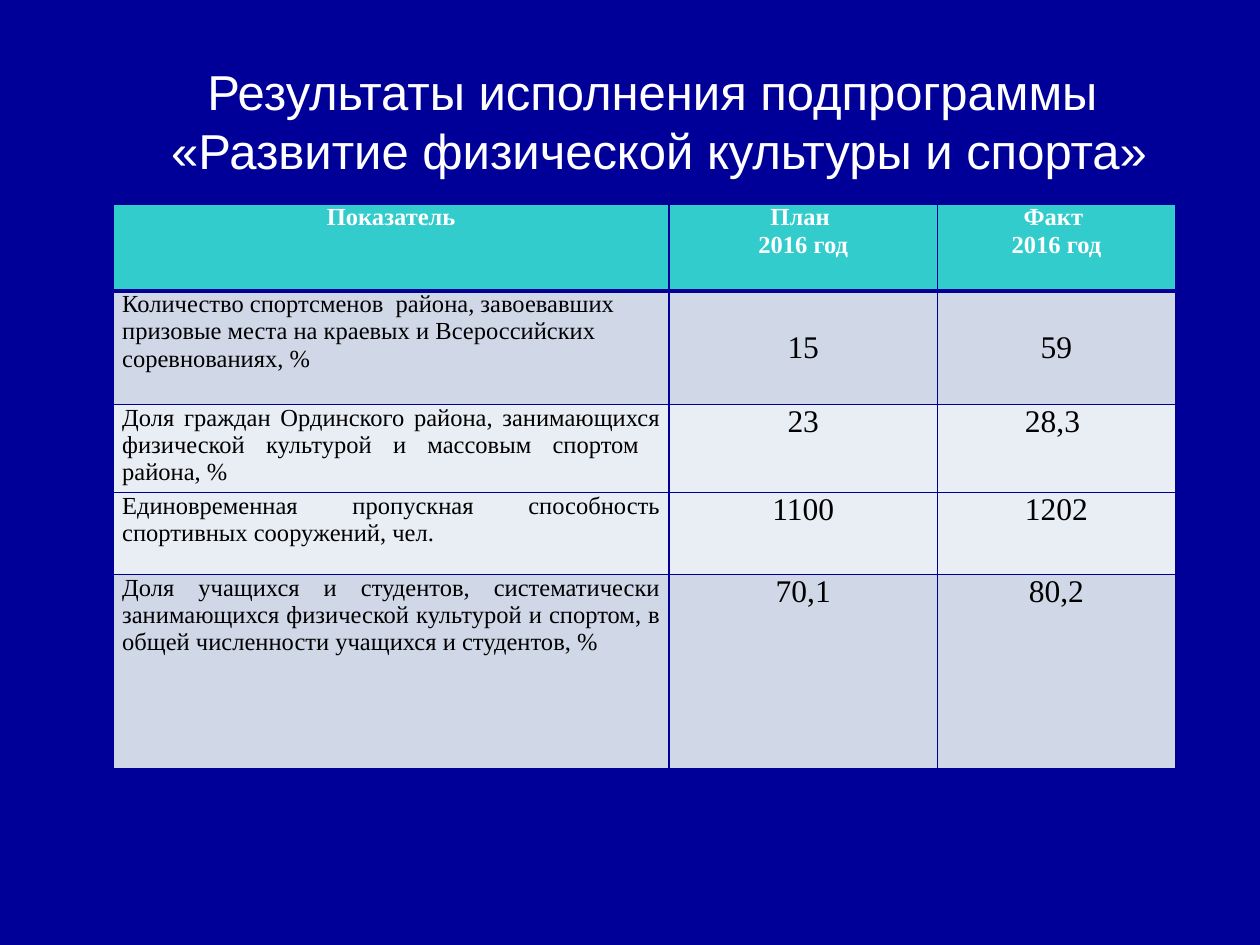
import pptx
import pptx.dml.color
import pptx.enum.text
import pptx.oxml
import pptx.oxml.ns
import pptx.util

ALIGN = pptx.enum.text.PP_ALIGN
ANCHOR = pptx.enum.text.MSO_ANCHOR
NAVY, TEAL, BLUE_GREY, PALE = "000099", "33CCCC", "D0D8E8", "E9EDF4"


def color(hex_value):
    return pptx.dml.color.RGBColor.from_string(hex_value)


def add_borders(cell, top_width, bottom_width):
    """Draw navy cell edges; widths are in points."""
    properties = cell._tc.get_or_add_tcPr()
    widths = {"lnL": 1, "lnR": 1, "lnT": top_width, "lnB": bottom_width}
    for position, (edge, width) in enumerate(widths.items()):
        properties.insert(position, pptx.oxml.parse_xml(
            f'<a:{edge} {pptx.oxml.ns.nsdecls("a")} w="{pptx.util.Pt(width)}">'
            f'<a:solidFill><a:srgbClr val="{NAVY}"/></a:solidFill></a:{edge}>'))


presentation = pptx.Presentation()
presentation.slide_width = pptx.util.Inches(10)
presentation.slide_height = pptx.util.Inches(7.5)
slide = presentation.slides.add_slide(presentation.slide_layouts[5])
slide.background.fill.solid()
slide.background.fill.fore_color.rgb = color(NAVY)

title = slide.shapes.title
title.left, title.top = pptx.util.Inches(1.21), pptx.util.Inches(0.44)
title.width, title.height = pptx.util.Inches(8.04), pptx.util.Inches(1.04)
heading = title.text_frame
heading.text = "Результаты исполнения подпрограммы \n«Развитие физической культуры и спорта»"
heading.word_wrap = False
heading.auto_size = pptx.enum.text.MSO_AUTO_SIZE.SHAPE_TO_FIT_TEXT
heading.vertical_anchor = ANCHOR.TOP
for paragraph in heading.paragraphs:
    paragraph.alignment = ALIGN.CENTER
    paragraph.font.name = "Arial"
    paragraph.font.size = pptx.util.Pt(28)
    paragraph.font.color.rgb = color("FFFFFF")

# Each row: height, fill, alignment of the indicator, cell texts
results = [
    (0.69, TEAL, ALIGN.CENTER, ["Показатель", "План \n2016 год", "Факт \n2016 год"]),
    (0.9, BLUE_GREY, ALIGN.LEFT,
     ["Количество спортсменов  района, завоевавших призовые места на краевых "
      "и Всероссийских соревнованиях, %", "15", "59"]),
    (0.7, PALE, ALIGN.JUSTIFY,
     ["Доля граждан Ординского района, занимающихся физической культурой "
      "и массовым спортом  района, %", "23", "28,3 "]),
    (0.65, PALE, ALIGN.JUSTIFY,
     ["Единовременная пропускная способность спортивных сооружений, чел.",
      "1100", "1202"]),
    (1.54, BLUE_GREY, ALIGN.JUSTIFY,
     ["Доля учащихся и студентов, систематически занимающихся физической "
      "культурой и спортом, в общей численности учащихся и студентов, %",
      "70,1", "80,2"]),
]
column_widths = [4.41, 2.13, 1.89]

table = slide.shapes.add_table(
    len(results), len(column_widths),
    pptx.util.Inches(0.9), pptx.util.Inches(1.62),
    pptx.util.Inches(sum(column_widths)),
    pptx.util.Inches(sum(row[0] for row in results))).table
for column, width in zip(table.columns, column_widths):
    column.width = pptx.util.Inches(width)

for row, (height, fill, indicator_alignment, texts) in enumerate(results):
    table.rows[row].height = pptx.util.Inches(height)
    is_header = row == 0
    for column, text in enumerate(texts):
        is_value = column > 0 and not is_header
        cell = table.cell(row, column)
        cell.text = text
        cell.margin_left = cell.margin_right = pptx.util.Inches(0.07)
        cell.margin_top = cell.margin_bottom = 0
        cell.vertical_anchor = ANCHOR.MIDDLE if is_value and row == 1 else ANCHOR.TOP
        cell.fill.solid()
        cell.fill.fore_color.rgb = color(fill)
        add_borders(cell, 3 if row == 1 else 1, 3 if is_header else 1)
        for paragraph in cell.text_frame.paragraphs:
            paragraph.alignment = ALIGN.CENTER if column else indicator_alignment
            paragraph.font.name = "Times New Roman"
            paragraph.font.size = pptx.util.Pt(18 if is_value else 14)
            paragraph.font.bold = is_header
            paragraph.font.color.rgb = color("FFFFFF" if is_header else "000000")

presentation.save("out.pptx")
